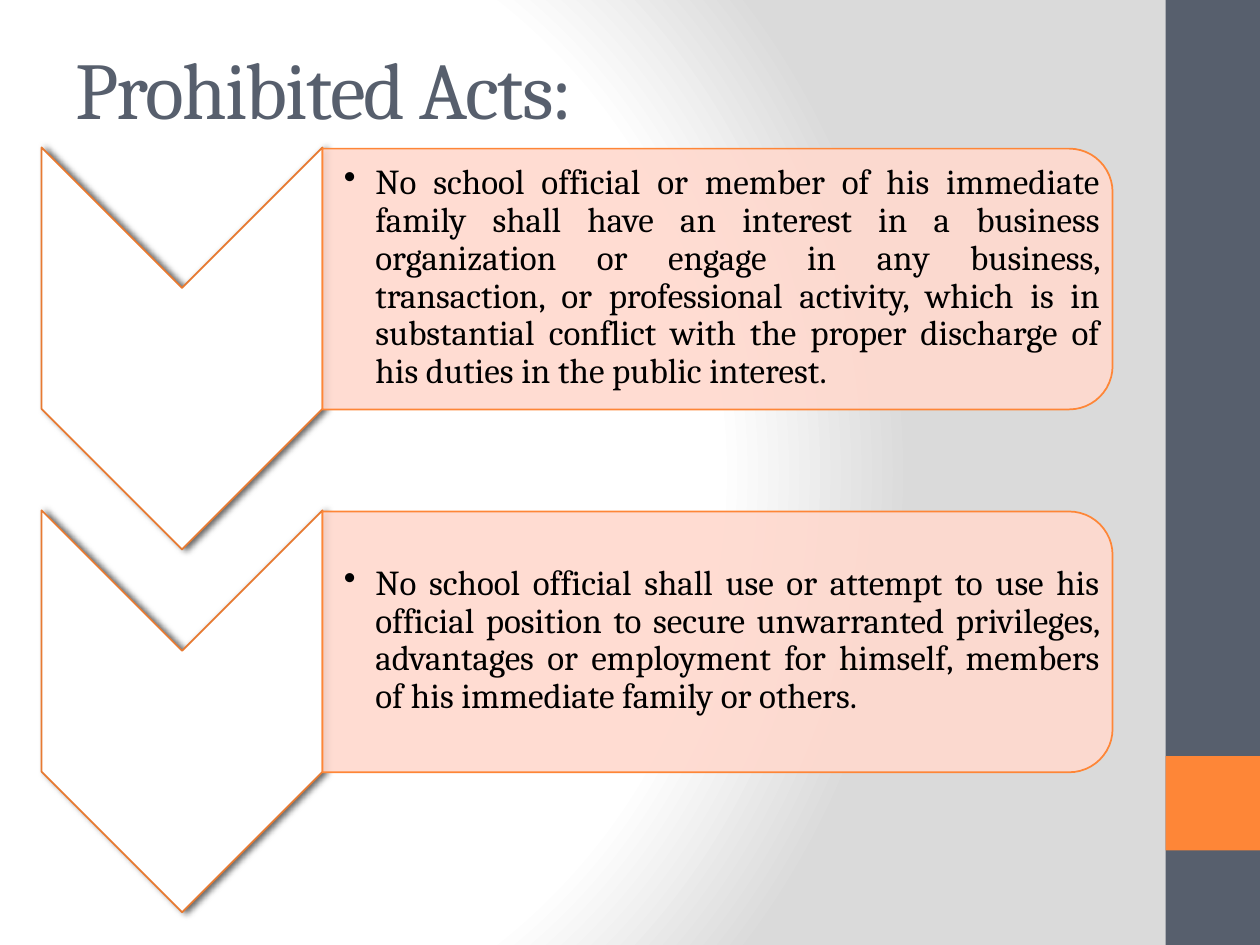
"""Build the slide on prohibited acts."""
from dataclasses import dataclass
from typing import Optional

from pptx import Presentation
from pptx.dml.color import RGBColor
from pptx.enum.shapes import MSO_SHAPE
from pptx.enum.text import MSO_ANCHOR, PP_ALIGN
from pptx.oxml import parse_xml
from pptx.oxml.ns import nsdecls
from pptx.util import Inches, Pt

FONT = "Cambria"
SLATE, ORANGE, RUST = "575F6D", "FE8637", "E77A32"
WHITE, BLACK, BLUSH = "FFFFFF", "000000", "FFD9CE"
STEP = 2.88


@dataclass
class Box:
    left: float
    top: float
    width: float
    height: float

    def down(self, gap: float) -> "Box":
        return Box(self.left, self.top + gap, self.width, self.height)

    def lengths(self) -> list:
        return [Inches(n) for n in (self.left, self.top, self.width, self.height)]


@dataclass
class Style:
    size: float
    color: str
    align: PP_ALIGN
    insets: tuple
    spacing: float = 1
    after: float = 0


ACTS = [
    "No school official or member of his immediate family shall have "
    "an interest in a business organization or engage in any business, "
    "transaction, or professional activity, which is in substantial conflict "
    "with the proper discharge of his duties in the public interest.",
    "No school official shall use or attempt to use his official "
    "position to secure unwarranted privileges, advantages or employment for "
    "himself, members of his immediate family or others.",
]
HEAD = Style(46, SLATE, PP_ALIGN.LEFT, (0.1, 0.05, 0.1, 0.05))
BODY = Style(20, BLACK, PP_ALIGN.JUSTIFY, (0.16, 0.01, 0.01, 0.01), 0.9, 3)


def paint(target, color: str) -> None:
    target.solid()
    target.fore_color.rgb = RGBColor.from_string(color)


def add_form(slide, kind, box: Box, fill: str, line: Optional[str] = None, turn: float = 0):
    form = slide.shapes.add_shape(kind, *box.lengths())
    form.shadow.inherit = False
    form.rotation = turn
    paint(form.fill, fill)
    if line:
        paint(form.line.fill, line)
        form.line.width = Pt(1)
    else:
        form.line.fill.background()
    return form


def add_words(slide, box: Box, words: str, style: Style):
    frame = slide.shapes.add_textbox(*box.lengths()).text_frame
    frame.word_wrap = True
    frame.vertical_anchor = MSO_ANCHOR.MIDDLE
    (frame.margin_left, frame.margin_top,
     frame.margin_right, frame.margin_bottom) = map(Inches, style.insets)
    para = frame.paragraphs[0]
    para.alignment = style.align
    para.line_spacing = style.spacing
    para.space_after = Pt(style.after)
    run = para.add_run()
    run.text = words
    run.font.name = FONT
    run.font.size = Pt(style.size)
    paint(run.font.fill, style.color)
    return para


def add_bullet(para) -> None:
    props = para._p.get_or_add_pPr()
    props.set("marL", str(Inches(0.25)))
    props.set("indent", str(Inches(-0.25)))
    props.append(parse_xml(f'<a:buChar {nsdecls("a")} char="•"/>'))


def add_glow(form) -> None:
    effects = form._element.spPr.find("{*}effectLst")
    effects.append(parse_xml(
        f'<a:outerShdw {nsdecls("a")} blurRad="{Pt(4)}" dist="{Pt(2)}" dir="0" '
        f'rotWithShape="0"><a:srgbClr val="{BLACK}"><a:alpha val="60000"/>'
        '</a:srgbClr></a:outerShdw>'))


def fade(form, part: int) -> None:
    tint = form._element.spPr.find("{*}solidFill")[0]
    tint.append(parse_xml(f'<a:alpha {nsdecls("a")} val="{part * 1000}"/>'))


def add_back(slide) -> None:
    stops = "".join(
        f'<a:gs pos="{pos * 1000}"><a:srgbClr val="{color}"/></a:gs>'
        for pos, color in ((0, WHITE), (75, WHITE), (100, "DADADA")))
    slide.element.cSld.insert(0, parse_xml(
        f'<p:bg {nsdecls("p", "a")}><p:bgPr><a:gradFill rotWithShape="1">'
        f'<a:gsLst>{stops}</a:gsLst><a:path path="circle"><a:fillToRect '
        'l="20000" t="50000" r="100000" b="50000"/></a:path></a:gradFill>'
        '<a:effectLst/></p:bgPr></p:bg>'))


def add_act(slide, words: str, gap: float) -> None:
    arrow = add_form(slide, MSO_SHAPE.CHEVRON,
                     Box(-0.15, 1.65, 3.19, 2.23).down(gap), WHITE, RUST, 90)
    add_glow(arrow)
    panel = add_form(slide, MSO_SHAPE.ROUND_2_SAME_RECTANGLE,
                     Box(4.66, -0.92, 2.07, 6.27).down(gap), BLUSH, ORANGE, 90)
    fade(panel, 90)
    add_bullet(add_words(slide, Box(2.57, 1.27, 6.17, 1.87).down(gap), words, BODY))


def main() -> None:
    deck = Presentation()
    deck.slide_width, deck.slide_height = Inches(10), Inches(7.5)
    slide = deck.slides.add_slide(deck.slide_layouts[6])
    add_back(slide)
    add_form(slide, MSO_SHAPE.RECTANGLE, Box(9.25, 0, 0.75, 7.5), SLATE)
    add_form(slide, MSO_SHAPE.RECTANGLE, Box(9.25, 6, 0.75, 0.75), ORANGE)
    title = add_words(slide, Box(0.5, 0.3, 8.33, 0.78), "Prohibited Acts:", HEAD)
    title.runs[0]._r.get_or_add_rPr().set("spc", "-100")
    for row, words in enumerate(ACTS):
        add_act(slide, words, row * STEP)
    deck.save("out.pptx")


if __name__ == "__main__":
    main()
